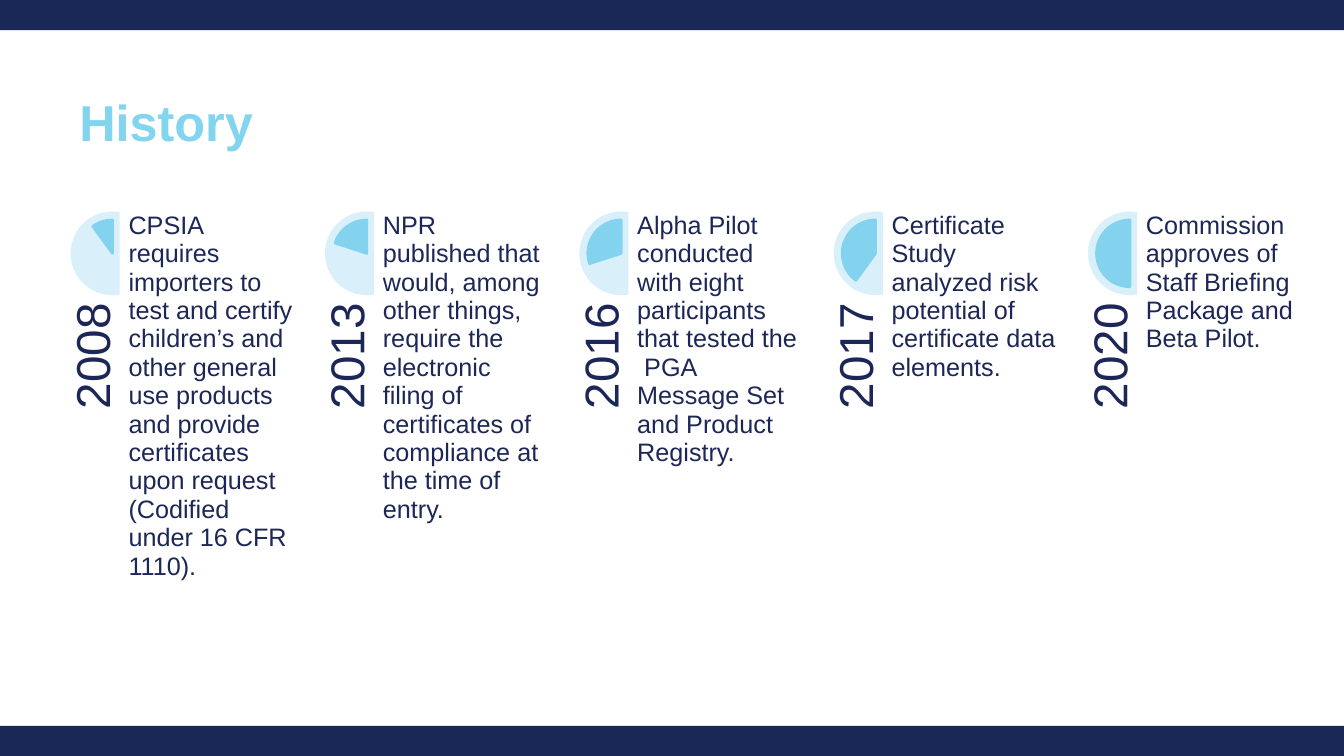
from dataclasses import dataclass

from pptx import Presentation
from pptx.dml.color import RGBColor
from pptx.enum.shapes import MSO_SHAPE as Shape
from pptx.enum.text import MSO_ANCHOR as Anchor, PP_ALIGN as Align
from pptx.util import Cm, Pt

COLORS = {
    "bar": "1A2857",
    "title": "83D4EF",
    "disc": "D9EFF9",
    "wedge": "83D3EF",
    "text": "1D2757",
}
WIDTH, HEIGHT, BAR = 33.87, 19.05, 0.76
LEFT, TOP, PITCH = 1.78, 5.33, 6.41
DISC, WEDGE = 2.11, 1.68
WEDGE_END, WEDGE_STEP = 162, 21.6


@dataclass(frozen=True)
class Box:
    left: float
    top: float
    width: float
    height: float

    def lengths(self) -> tuple[Cm, Cm, Cm, Cm]:
        return Cm(self.left), Cm(self.top), Cm(self.width), Cm(self.height)


@dataclass(frozen=True)
class Milestone:
    year: str
    text: str


MILESTONES = [
    Milestone("2008", "CPSIA requires importers to test and certify children’s and other "
              "general use products and provide certificates upon request "
              "(Codified under 16 CFR 1110)."),
    Milestone("2013", "NPR published that would, among other things, require the electronic "
              "filing of certificates of compliance at the time of entry."),
    Milestone("2016", "Alpha Pilot conducted with eight participants that tested the "
              " PGA Message Set and Product Registry."),
    Milestone("2017", "Certificate Study analyzed risk potential of certificate data elements."),
    Milestone("2020", "Commission approves of Staff Briefing Package and Beta Pilot."),
]


def rgb(name: str) -> RGBColor:
    return RGBColor.from_string(COLORS[name])


def add_filled(shapes, kind: Shape, box: Box, color: str, angles: tuple = ()):
    sp = shapes.add_shape(kind, *box.lengths())
    sp.shadow.inherit = False
    sp.fill.solid()
    sp.fill.fore_color.rgb = rgb(color)
    sp.line.fill.background()
    for i, angle in enumerate(angles):
        sp.adjustments[i] = angle
    return sp


def add_text(shapes, box: Box, text: str, size: int, color: str, inset: float = 0):
    sp = shapes.add_textbox(*box.lengths())
    tf = sp.text_frame
    tf.word_wrap = True
    tf.margin_left = tf.margin_right = Cm(inset)
    tf.margin_top = tf.margin_bottom = Cm(inset)
    p = tf.paragraphs[0]
    p.text = text
    p.line_spacing = 0.94
    p.font.name = "Arial"
    p.font.size = Pt(size)
    p.font.color.rgb = rgb(color)
    return sp


def add_milestone(shapes, index: int, milestone: Milestone) -> None:
    left = LEFT + index * PITCH
    gap = (DISC - WEDGE) / 2
    add_filled(shapes, Shape.CHORD, Box(left, TOP, DISC, DISC), "disc", (48, 168))

    start = WEDGE_END - WEDGE_STEP * (index + 1)
    wedge = add_filled(shapes, Shape.PIE, Box(left + gap, TOP + gap, WEDGE, WEDGE),
                       "wedge", (start, WEDGE_END))
    wedge.line.color.rgb = rgb("wedge")
    wedge.line.width = Pt(2)

    year = add_text(shapes, Box(left - 2.42, 10.06, 6.1, 1.27), milestone.year, 34, "text")
    year.rotation = 270
    year.text_frame.vertical_anchor = Anchor.BOTTOM
    year.text_frame.paragraphs[0].alignment = Align.RIGHT

    add_text(shapes, Box(left + 1.46, TOP, 4.19, 8.38), milestone.text, 18, "text")


def main() -> None:
    prs = Presentation()
    prs.slide_width, prs.slide_height = Cm(WIDTH), Cm(HEIGHT)
    s = prs.slides.add_slide(prs.slide_layouts[6])

    for top in (HEIGHT - BAR, 0):
        add_filled(s.shapes, Shape.RECTANGLE, Box(0, top, WIDTH, BAR), "bar")

    title = add_text(s.shapes, Box(1.75, 2.16, 30.45, 3.1), "History", 36, "title", 0.25)
    title.text_frame.paragraphs[0].font.bold = True

    timeline = s.shapes.add_group_shape()
    for index, milestone in enumerate(MILESTONES):
        add_milestone(timeline.shapes, index, milestone)

    prs.save("out.pptx")


if __name__ == "__main__":
    main()
